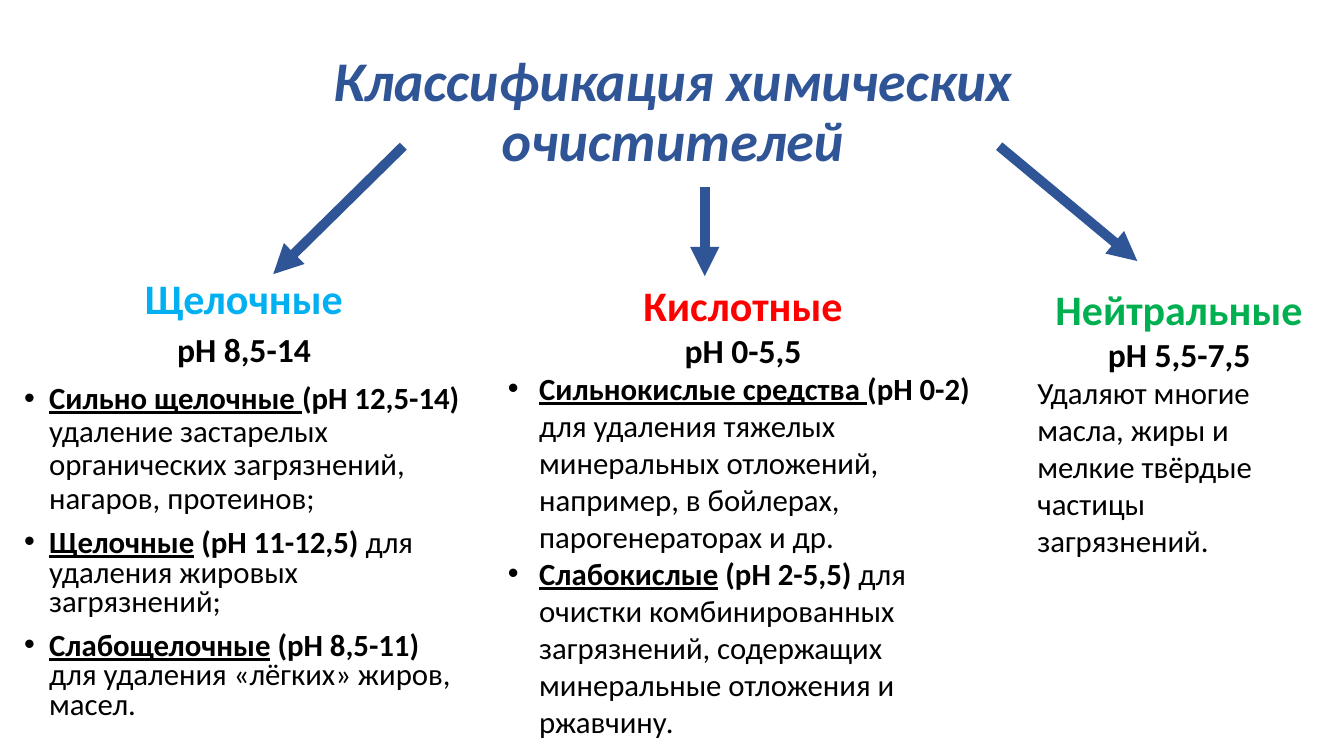
from lxml import etree
from pptx import Presentation
from pptx import util as u
from pptx.dml.color import RGBColor
from pptx.enum import shapes, text
from pptx.oxml.ns import qn

PX = 9144  # EMU per px, 100 px to the inch
FONT = "Calibri"
NAVY = RGBColor(0x2F, 0x55, 0x97)
BLUE = RGBColor(0x00, 0xB0, 0xF0)
RED = RGBColor(0xFF, 0x00, 0x00)
GREEN = RGBColor(0x00, 0xB0, 0x50)
BLACK = RGBColor(0x00, 0x00, 0x00)
WHITE = RGBColor(0xFF, 0xFF, 0xFF)

# Each bullet: underlined name, bold pH range, plain description
ALKALINE = [
    ("Сильно щелочные ", "(pH 12,5-14) ",
     "удаление застарелых органических загрязнений, нагаров, протеинов;"),
    ("Щелочные", " (pH 11-12,5) ", "для удаления жировых загрязнений;"),
    ("Слабощелочные", " (pH 8,5-11) ", "для удаления «лёгких» жиров, масел."),
]
ACIDIC = [
    ("Сильнокислые средства ", "(pH 0-2) ",
     "для удаления тяжелых минеральных отложений, например, в бойлерах, "
     "парогенераторах и др."),
    ("Слабокислые", " (pH 2-5,5) ",
     "для очистки комбинированных загрязнений, содержащих минеральные "
     "отложения и ржавчину."),
]
NEUTRAL = "Удаляют многие масла, жиры и мелкие твёрдые частицы загрязнений."

ARROWS = [
    (400, 145, 271, 272),
    (699, 186, 699, 274),
    (991, 145, 1128, 259),
]


def px(*lengths):
    return [u.Emu(length * PX) for length in lengths]


def style(font, size, color=BLACK, bold=False, italic=False):
    font.name = FONT
    font.size = u.Pt(size)
    font.color.rgb = color
    font.bold = bold
    font.italic = italic


def add_box(slide, box):
    text_frame = slide.shapes.add_textbox(*px(*box)).text_frame
    text_frame.word_wrap = True
    return text_frame


def add_line(text_frame, words, size, color=BLACK, bold=True, centered=True):
    """Write a one-style paragraph, using the empty first one if it is free."""
    paragraph = text_frame.paragraphs[0]
    if paragraph.runs:
        paragraph = text_frame.add_paragraph()
    paragraph.text = words
    if centered:
        paragraph.alignment = text.PP_ALIGN.CENTER
    for run in paragraph.runs:
        style(run.font, size, color, bold)
    return paragraph


def add_bullet(text_frame, parts, indent):
    paragraph = text_frame.add_paragraph()
    properties = paragraph._p.get_or_add_pPr()
    properties.set("marL", str(indent * PX))
    properties.set("indent", str(-indent * PX))
    etree.SubElement(properties, qn("a:buFont")).set("typeface", "Arial")
    etree.SubElement(properties, qn("a:buChar")).set("char", "•")
    for position, words in enumerate(parts):
        run = paragraph.add_run()
        run.text = words
        style(run.font, 22, bold=position < 2)
        run.font.underline = position == 0
    return paragraph


def add_column(slide, box, heading, color, acidity, bullets=(), indent=0):
    text_frame = add_box(slide, box)
    add_line(text_frame, heading, 30, color)
    add_line(text_frame, acidity, 24)
    for parts in bullets:
        add_bullet(text_frame, parts, indent)
    return text_frame


def add_arrow(slide, ends):
    arrow = slide.shapes.add_connector(shapes.MSO_CONNECTOR.STRAIGHT, *px(*ends))
    arrow.line.color.rgb = NAVY
    arrow.line.width = u.Pt(7)
    etree.SubElement(arrow.line._get_or_add_ln(), qn("a:tailEnd")).set("type", "triangle")
    etree.SubElement(arrow._element.spPr, qn("a:effectLst"))


def main():
    presentation = Presentation()
    presentation.slide_width, presentation.slide_height = px(1333, 750)
    slide = presentation.slides.add_slide(presentation.slide_layouts[6])
    slide.background.fill.solid()
    slide.background.fill.fore_color.rgb = WHITE

    # Title
    title = add_box(slide, (92, 40, 1150, 145))
    title.vertical_anchor = text.MSO_ANCHOR.MIDDLE
    paragraph = add_line(title, "Классификация химических\vочистителей", 40, NAVY)
    paragraph.line_spacing = 0.9
    for run in paragraph.runs:
        run.font.italic = True

    # Alkaline cleaners, set tighter than the other columns
    alkaline = add_column(slide, (14, 275, 456, 452), "Щелочные", BLUE,
                          "pH 8,5-14", ALKALINE, 25)
    for position, paragraph in enumerate(alkaline.paragraphs):
        paragraph.line_spacing = 0.9 if position == 2 else 0.8
        if position > 0:
            paragraph.space_before = u.Pt(10)

    # Acidic cleaners
    add_column(slide, (494, 272, 486, 468), "Кислотные", RED,
               "pH 0-5,5", ACIDIC, 31)

    # Neutral cleaners
    neutral = add_column(slide, (1019, 276, 301, 286), "Нейтральные", GREEN,
                         "pH 5,5-7,5")
    add_line(neutral, NEUTRAL, 22, bold=False, centered=False)

    # Arrows from the title to the columns
    for ends in ARROWS:
        add_arrow(slide, ends)

    presentation.save("out.pptx")


if __name__ == "__main__":
    main()
